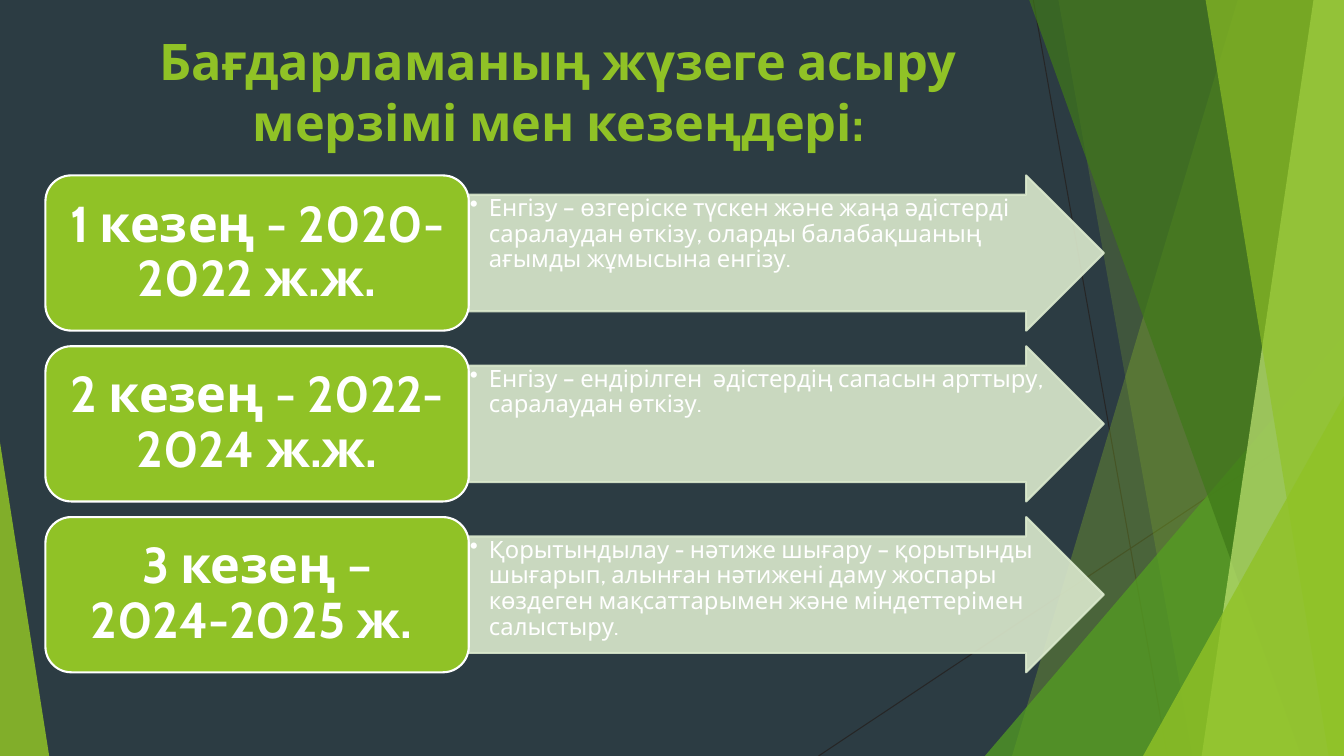
"""Build the slide on the terms and stages of the programme."""
from dataclasses import dataclass

from lxml import etree
from pptx import Presentation, util as u
from pptx.dml.color import RGBColor
from pptx.enum import shapes, text
from pptx.oxml import ns

COLORS = {
    "background": "2C3C43", "line": "262626", "lime": "90C226",
    "green": "54A021", "forest": "3F7819", "pale": "C0E474",
    "arrow": "DBE9CD", "white": "FFFFFF",
}
FONT = "Cabin"
WIDTH, HEIGHT = u.Inches(13.33), u.Inches(7.5)


@dataclass
class Facet:
    """A band ending at the right edge, given by its top and bottom left corners."""
    top_x: float
    bottom_x: float
    color: str
    opacity: int


@dataclass
class Corner:
    """A right triangle on the bottom edge, with its apex at one side."""
    left: float
    top: float
    width: float
    apex: int
    color: str
    opacity: int


@dataclass
class Stage:
    """A period and what is done in it."""
    period: str
    task: str


DECORATIONS = [
    Facet(92.1, 75.3, "lime", 30),
    Facet(78.75, 88.73, "lime", 20),
    Corner(73.28, 44.4, 26.72, 1, "green", 72),
    Facet(76.58, 96.83, "forest", 70),
    Facet(97.73, 89.41, "pale", 70),
    Facet(89.7, 98.86, "lime", 65),
    Corner(85.05, 52.4, 14.95, 1, "lime", 80),
    Corner(0, 58.53, 3.66, 0, "lime", 85),
]
RAYS = [(76.88, 0, 86.86, 100), (100, 53.73, 60.9, 100)]
STAGES = [
    Stage("1 кезең - 2020-2022 ж.ж.",
          "Енгізу – өзгеріске түскен және жаңа әдістерді саралаудан өткізу, "
          "оларды балабақшаның ағымды жұмысына енгізу."),
    Stage("2 кезең - 2022-2024 ж.ж.",
          "Енгізу – ендірілген  әдістердің сапасын арттыру, саралаудан өткізу."),
    Stage("3 кезең – 2024-2025 ж. ",
          "Қорытындылау - нәтиже шығару – қорытынды шығарып, алынған нәтижені "
          "даму жоспары көздеген мақсаттарымен және міндеттерімен салыстыру."),
]
STAGE_TOP, STAGE_PITCH, STAGE_HEIGHT = 23.2, 22.6, 20.53
LABEL_LEFT, LABEL_WIDTH, ARROW_WIDTH = 3.38, 31.5, 47.25


def across(percent: float) -> int:
    """Convert a percentage of the slide width to a length."""
    return round(WIDTH * percent / 100)


def down(percent: float) -> int:
    """Convert a percentage of the slide height to a length."""
    return round(HEIGHT * percent / 100)


def rgb(name: str) -> RGBColor:
    """Look up a named colour."""
    return RGBColor.from_string(COLORS[name])


def paint(shape, color: str, opacity: int = 100, outline: str | None = None) -> None:
    """Fill and outline a shape at the given opacity, without a shadow."""
    shape.shadow.inherit = False
    shape.fill.solid()
    shape.fill.fore_color.rgb = rgb(color)
    if outline:
        shape.line.color.rgb = rgb(outline)
        shape.line.width = u.Pt(1.5)
    else:
        shape.line.fill.background()
    if opacity < 100:
        for element in shape._element.spPr.iter(ns.qn("a:srgbClr")):
            etree.SubElement(element, ns.qn("a:alpha"), val=str(opacity * 1000))


def write(shape, content: str, size: int, color: str, bold: bool,
          alignment, anchor, spacing: float):
    """Put one formatted paragraph in a shape and return it."""
    frame = shape.text_frame
    frame.word_wrap = True
    frame.auto_size = text.MSO_AUTO_SIZE.NONE
    frame.vertical_anchor = anchor
    frame.text = content
    paragraph = frame.paragraphs[0]
    paragraph.alignment = alignment
    paragraph.line_spacing = spacing
    paragraph.font.name, paragraph.font.size = FONT, u.Pt(size)
    paragraph.font.bold = bold
    paragraph.font.color.rgb = rgb(color)
    return paragraph


def set_insets(shape, horizontal: float, vertical: float) -> None:
    """Set the text margins of a shape in inches."""
    frame = shape.text_frame
    frame.margin_left = frame.margin_right = u.Inches(horizontal)
    frame.margin_top = frame.margin_bottom = u.Inches(vertical)


def add_ray(slide, ray: tuple) -> None:
    """Draw a thin decorative line."""
    x1, y1, x2, y2 = ray
    connector = slide.shapes.add_connector(
        shapes.MSO_CONNECTOR.STRAIGHT, across(x1), down(y1), across(x2), down(y2))
    connector.line.color.rgb = rgb("line")
    connector.line.width = u.Pt(0.75)
    etree.SubElement(connector._element.spPr, ns.qn("a:effectLst"))


def add_decoration(slide, item: Facet | Corner) -> None:
    """Draw a translucent facet or corner."""
    if isinstance(item, Facet):
        builder = slide.shapes.build_freeform(across(item.top_x), 0)
        builder.add_line_segments(
            [(WIDTH, 0), (WIDTH, HEIGHT), (across(item.bottom_x), HEIGHT)])
        shape = builder.convert_to_shape()
    else:
        shape = slide.shapes.add_shape(
            shapes.MSO_SHAPE.ISOSCELES_TRIANGLE, across(item.left), down(item.top),
            across(item.width), down(100 - item.top))
        shape.adjustments[0] = item.apex
    paint(shape, item.color, item.opacity)


def add_stage(slide, index: int, stage: Stage) -> None:
    """Draw one row: an arrow with the task and a label with the period."""
    top, height = down(STAGE_TOP + index * STAGE_PITCH), down(STAGE_HEIGHT)
    arrow = slide.shapes.add_shape(
        shapes.MSO_SHAPE.RIGHT_ARROW, across(LABEL_LEFT + LABEL_WIDTH), top,
        across(ARROW_WIDTH), height)
    arrow.adjustments[0] = 0.75
    paint(arrow, "arrow", 90, "arrow")
    set_insets(arrow, 0.01, 0.01)
    paragraph = write(arrow, stage.task, 17, "white", False,
                      text.PP_ALIGN.LEFT, text.MSO_ANCHOR.TOP, 0.9)
    paragraph.level = 1
    properties = paragraph._p.get_or_add_pPr()
    properties.set("marL", str(u.Inches(0.19)))
    properties.set("indent", str(-u.Inches(0.19)))
    bullet = etree.Element(ns.qn("a:buChar"), char="•")
    properties.find(ns.qn("a:defRPr")).addprevious(bullet)

    label = slide.shapes.add_shape(
        shapes.MSO_SHAPE.ROUNDED_RECTANGLE, across(LABEL_LEFT), top,
        across(LABEL_WIDTH), height)
    paint(label, "lime", outline="white")
    set_insets(label, 0.15, 0.07)
    write(label, stage.period, 36, "white", True,
          text.PP_ALIGN.CENTER, text.MSO_ANCHOR.MIDDLE, 0.9)


def main() -> None:
    """Create and save the presentation."""
    presentation = Presentation()
    presentation.slide_width, presentation.slide_height = WIDTH, HEIGHT
    slide = presentation.slides.add_slide(presentation.slide_layouts[5])
    slide.background.fill.solid()
    slide.background.fill.fore_color.rgb = rgb("background")
    for ray in RAYS:
        add_ray(slide, ray)
    for item in DECORATIONS:
        add_decoration(slide, item)
    title = slide.shapes.title
    title.left, title.top = across(6.3), down(3.33)
    title.width, title.height = across(70.5), down(19.2)
    write(title, "Бағдарламаның жүзеге асыру мерзімі мен кезеңдері:", 36, "lime",
          True, text.PP_ALIGN.CENTER, text.MSO_ANCHOR.TOP, 1.0)
    for index, stage in enumerate(STAGES):
        add_stage(slide, index, stage)
    presentation.save("out.pptx")


if __name__ == "__main__":
    main()
